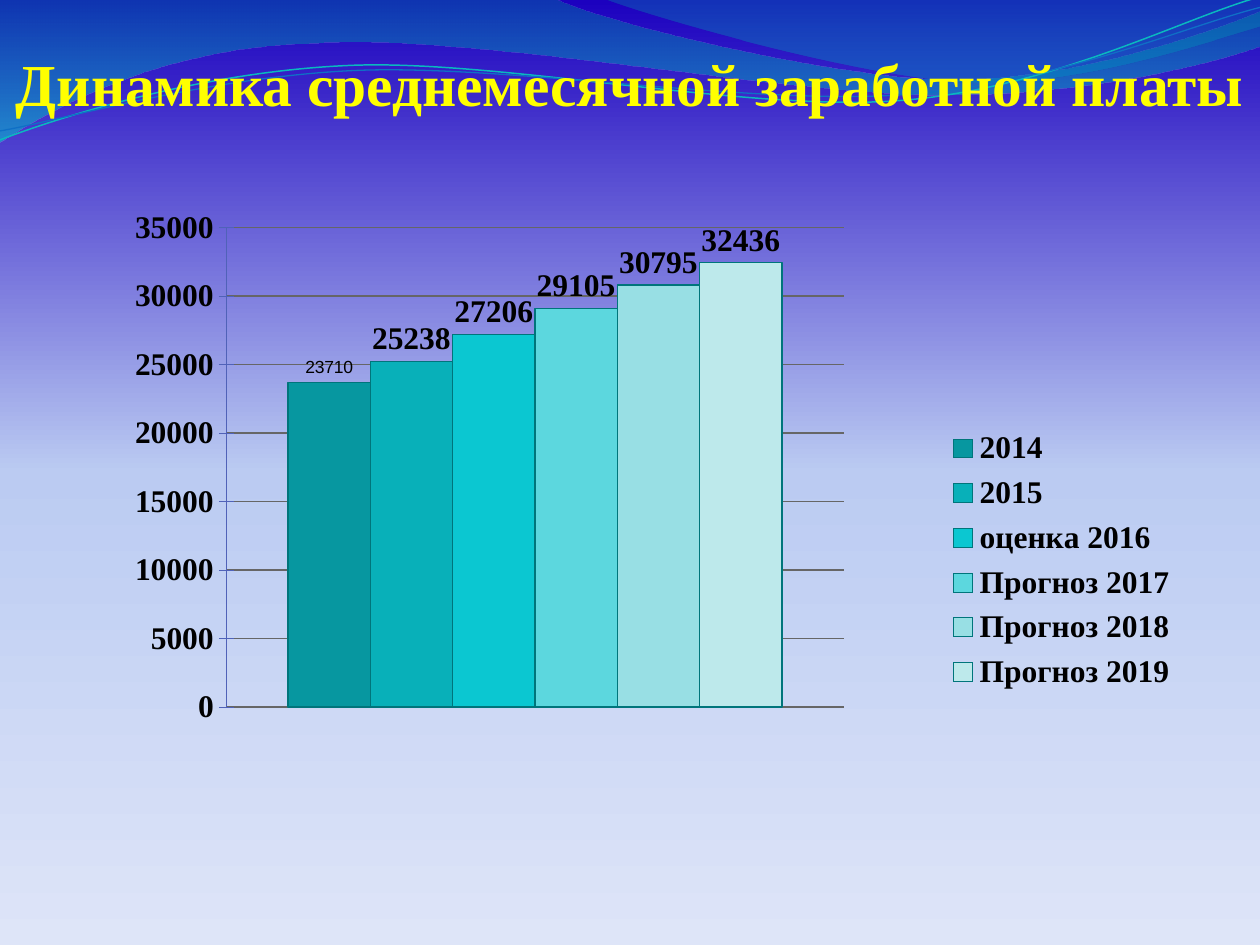
from dataclasses import dataclass
from math import cos, radians, sin

from lxml import etree
from pptx import Presentation
from pptx.chart.data import CategoryChartData
from pptx.dml.color import RGBColor
from pptx.enum.chart import (XL_CHART_TYPE, XL_LABEL_POSITION,
                             XL_LEGEND_POSITION, XL_TICK_MARK)
from pptx.enum.text import MSO_ANCHOR, PP_ALIGN
from pptx.oxml import parse_xml
from pptx.oxml.ns import nsdecls, qn
from pptx.util import Cm, Pt

COLUMNS = XL_CHART_TYPE.COLUMN_CLUSTERED
OUTSIDE_END = XL_LABEL_POSITION.OUTSIDE_END
LEGEND_RIGHT = XL_LEGEND_POSITION.RIGHT
CROSS = XL_TICK_MARK.CROSS
BOTTOM = MSO_ANCHOR.BOTTOM
CENTER = PP_ALIGN.CENTER


@dataclass(frozen=True)
class Theme:
    font: str = "Times New Roman"
    chart_font: str = "Vollkorn"
    small_font: str = "Arial"
    title_size: float = 34
    chart_size: float = 18
    small_size: float = 10
    title: str = "FFFF00"
    text: str = "000000"
    grid: str = "666666"
    axis: str = "5062B8"
    bar_edge: str = "00757B"
    background: tuple = ((0, "1C01BF", 100), (50, "BBCBF2", 100), (100, "DEE5F8", 100))
    upper_wave: tuple = ((0, "0074A1", 45), (100, "00C6CF", 55))
    right_wave: tuple = ((0, "00A1A9", 30), (80, "008BBF", 45))
    bright_line: str = "0AB8BF"
    blue_line: str = "0F6FC6"


THEME = Theme()
TILT = 357.3
SALARIES = (
    ("2014", 23710, "0797A0"),
    ("2015", 25238, "08B0B9"),
    ("оценка 2016", 27206, "0BC7D1"),
    ("Прогноз 2017", 29105, "5CD7DE"),
    ("Прогноз 2018", 30795, "98DFE4"),
    ("Прогноз 2019", 32436, "BDE9EB"),
)
UPPER_WAVE = (
    ((0, 0),),
    ((11.18, -0.03),),
    ((12.09, 0.43), (16.87, 1.6), (19.25, 1.6)),
    ((21.67, 1.6), (24.33, 0.66), (25.4, 0.23)),
    ((25.43, 0.91),),
    ((24.97, 1.12), (22.1, 1.93), (18.95, 1.91)),
    ((15.8, 1.91), (9.7, 0.71), (6.53, 0.86)),
    ((3.28, 0.91), (1.17, 2.11), (-0.03, 2.87)),
    ((0, 0),),
)
RIGHT_WAVE = (
    ((12.17, -0.03),),
    ((12.93, 0.28), (17.32, 1.57), (19.53, 1.65)),
    ((21.74, 1.75), (24.41, 0.81), (25.4, 0.53)),
    ((25.4, 0),),
    ((12.17, -0.03),),
)
BRIGHT_LINE = (
    ((0, 2.82),),
    ((1.22, 2.36), (4.01, 1.45), (7.04, 1.32)),
    ((10.03, 1.19), (15.06, 2.26), (18.11, 2.03)),
    ((21.16, 1.8), (23.83, 0.38), (25.35, -0.05)),
)
BLUE_LINE = (
    ((0, 2.64),),
    ((1.19, 2.44), (4.17, 1.55), (7.19, 1.42)),
    ((10.24, 1.3), (15.16, 2.13), (18.21, 1.91)),
    ((21.23, 1.7), (23.9, 0.53), (25.4, 0.15)),
)


def rgb(color):
    return RGBColor.from_string(color)


def set_font(font, name, size, color, bold=True):
    font.name, font.size, font.bold = name, Pt(size), bold
    font.color.rgb = rgb(color)


def set_line(line, color, width):
    line.color.rgb = rgb(color)
    line.width = Pt(width)


def set_gradient(fill, holder, stops):
    fill.solid()
    stop_xml = "".join(
        f'<a:gs pos="{place * 1000}"><a:srgbClr val="{color}">'
        f'<a:alpha val="{opacity * 1000}"/></a:srgbClr></a:gs>'
        for place, color, opacity in stops)
    gradient = parse_xml(
        f'<a:gradFill {nsdecls("a")} rotWithShape="1"><a:gsLst>{stop_xml}</a:gsLst>'
        '<a:lin ang="5400000" scaled="0"/></a:gradFill>')
    holder.replace(holder.find(qn("a:solidFill")), gradient)


def turn(segments, degrees, center):
    angle = radians(degrees)
    center_x, center_y = center
    return [[(center_x + (x - center_x) * cos(angle) - (y - center_y) * sin(angle),
              center_y + (x - center_x) * sin(angle) + (y - center_y) * cos(angle))
             for x, y in segment] for segment in segments]


def add_outline(shapes, box, segments, closed):
    left, top = box[:2]
    points = [(left + Cm(x), top + Cm(y)) for segment in segments for x, y in segment]
    builder = shapes.build_freeform(*points[0], scale=1.0)
    builder.add_line_segments(points[1:], close=closed)
    shape = builder.convert_to_shape()
    shape.shadow.inherit = False
    moves = iter(shape.element.findall(".//" + qn("a:lnTo")))
    for segment in segments[1:]:
        group = [next(moves) for _ in segment]
        if len(group) == 3:
            curve = etree.Element(qn("a:cubicBezTo"))
            group[0].addprevious(curve)
            for move in group:
                curve.append(move[0])
                move.getparent().remove(move)
    return shape


def add_waves(page, box):
    for segments, stops in ((UPPER_WAVE, THEME.upper_wave), (RIGHT_WAVE, THEME.right_wave)):
        wave = add_outline(page.shapes, box, segments, True)
        set_gradient(wave.fill, wave.element.spPr, stops)
        wave.line.fill.background()
    group = page.shapes.add_group_shape()
    for segments, center, color, width in (
            (BRIGHT_LINE, (12.68, 1.46), THEME.bright_line, 0.85),
            (BLUE_LINE, (12.69, 1.5), THEME.blue_line, 0.75)):
        level = turn(segments, 360 - TILT, center)
        curve = add_outline(group.shapes, box, level, False)
        curve.rotation = TILT
        curve.fill.background()
        set_line(curve.line, color, width)


def set_layout(element, left, top, width, height, inner=False):
    old = element.find(qn("c:layout"))
    if old is not None:
        element.remove(old)
    layout = etree.Element(qn("c:layout"))
    manual = etree.SubElement(layout, qn("c:manualLayout"))
    settings = [("layoutTarget", "inner")] if inner else []
    settings += [("xMode", "edge"), ("yMode", "edge"),
                 ("x", left), ("y", top), ("w", width), ("h", height)]
    for name, value in settings:
        etree.SubElement(manual, qn(f"c:{name}")).set("val", str(value))
    element.insert(0 if inner else 1, layout)


def add_salary_chart(page, box):
    data = CategoryChartData()
    data.categories = ["1"]
    for name, salary, _ in SALARIES:
        data.add_series(name, [salary])
    chart = page.shapes.add_chart(COLUMNS, *box, data).chart
    chart.has_title = False
    set_font(chart.font, THEME.chart_font, THEME.chart_size, THEME.text, False)

    plot = chart.plots[0]
    plot.gap_width, plot.overlap, plot.vary_by_categories = 150, 0, False
    for series, (_, _, color) in zip(plot.series, SALARIES):
        series.format.fill.solid()
        series.format.fill.fore_color.rgb = rgb(color)
        set_line(series.format.line, THEME.bar_edge, 0.75)
    first, *others = plot.series
    label = first.points[0].data_label
    set_font(label.font, THEME.small_font, THEME.small_size, THEME.text, False)
    label.position = OUTSIDE_END
    first.data_labels.show_value = False
    for series in others:
        labels = series.data_labels
        labels.show_value, labels.position = True, OUTSIDE_END
        set_font(labels.font, THEME.font, THEME.chart_size, THEME.text)

    chart.category_axis.visible = False
    scale = chart.value_axis
    scale.minimum_scale, scale.maximum_scale, scale.major_unit = 0, 35000, 5000
    scale.major_tick_mark = CROSS
    set_font(scale.tick_labels.font, THEME.font, THEME.chart_size, THEME.text)
    set_line(scale.format.line, THEME.axis, 0.5)
    set_line(scale.major_gridlines.format.line, THEME.grid, 1)

    chart.has_legend = True
    legend = chart.legend
    legend.position, legend.include_in_layout = LEGEND_RIGHT, False
    set_font(legend.font, THEME.font, THEME.chart_size, THEME.text)
    area = chart.element.find(".//" + qn("c:plotArea"))
    set_layout(area, 0.17, 0.04, 0.51, 0.67, inner=True)
    set_layout(chart.element.find(".//" + qn("c:legend")), 0.76, 0.31, 0.2, 0.39)


def add_title(page, box):
    frame = page.shapes.add_textbox(*box).text_frame
    frame.word_wrap = True
    frame.vertical_anchor = BOTTOM
    frame.margin_left = frame.margin_right = frame.margin_bottom = 0
    frame.margin_top = Cm(0.13)
    frame.text = "Динамика среднемесячной заработной платы"
    para = frame.paragraphs[0]
    para.alignment = CENTER
    set_font(para.runs[0].font, THEME.font, THEME.title_size, THEME.title)


def main():
    deck = Presentation()
    deck.slide_width, deck.slide_height = Cm(25.4), Cm(19.05)
    page = deck.slides.add_slide(deck.slide_layouts[6])
    fill = page.background.fill
    set_gradient(fill, page.element.find(".//" + qn("p:bgPr")) if fill.solid() is None else None,
                 THEME.background)
    add_waves(page, (0, 0, deck.slide_width, Cm(2.9)))
    add_salary_chart(page, (Cm(0.41), Cm(4.01), Cm(24.41), Cm(14.43)))
    add_title(page, (0, Cm(0.4), deck.slide_width, Cm(1.98)))
    deck.save("out.pptx")


if __name__ == "__main__":
    main()
